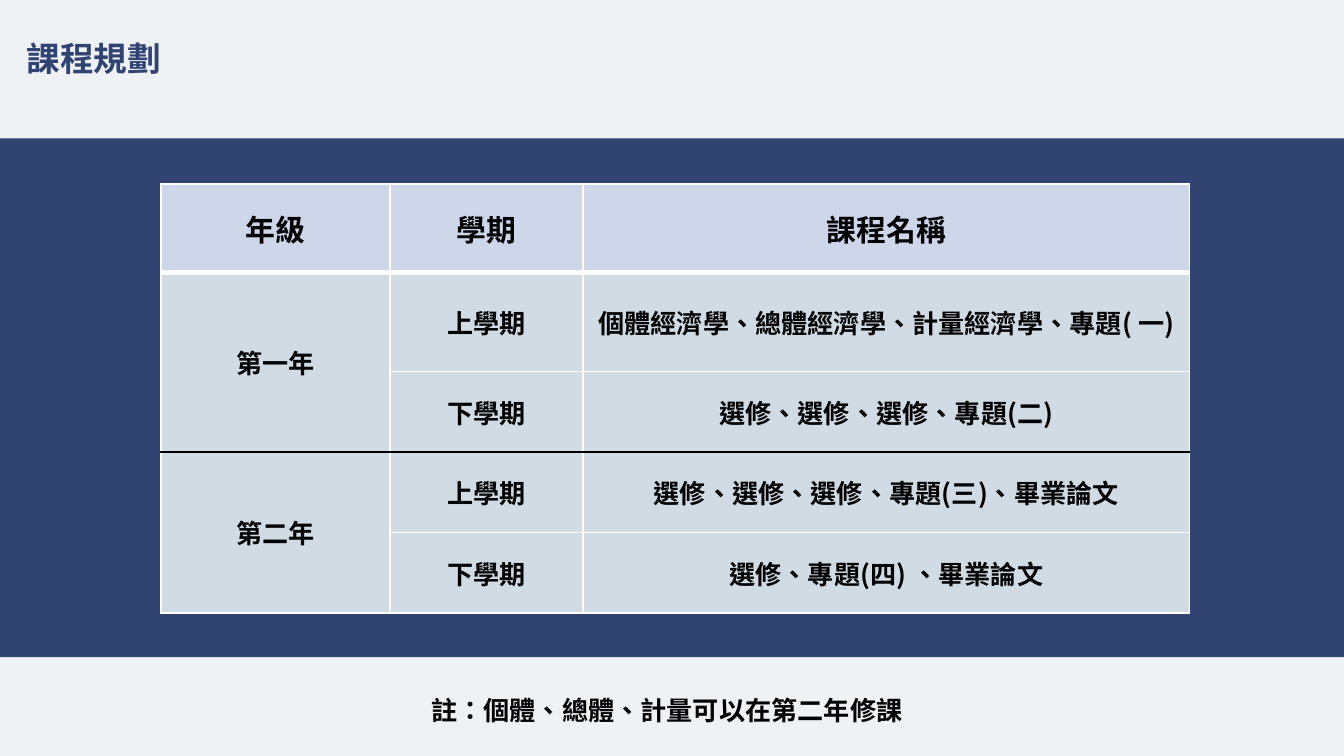
from lxml import etree
from pptx import Presentation
from pptx import util as u
from pptx.dml.color import RGBColor
from pptx.enum import shapes, text
from pptx.oxml import ns

WIDTH = 10
HEIGHT = WIDTH * 9 / 16
FONT = "Noto Sans CJK SC"
NAVY, PALE, BLACK, WHITE = "304371", "EEF2F5", "000000", "FFFFFF"
HEADER_FILL, BODY_FILL = "CED6EA", "D0DBE3"

COLUMNS = [1.7, 1.44, 4.51]
ROWS = [0.66, 0.74, 0.6, 0.6, 0.6]
HEADINGS = ["年級", "學期", "課程名稱"]
YEARS = {
    "第一年": [
        ("上學期", "個體經濟學、總體經濟學、計量經濟學、專題( 一)"),
        ("下學期", "選修、選修、選修、專題(二)"),
    ],
    "第二年": [
        ("上學期", "選修、選修、選修、專題(三)、畢業論文"),
        ("下學期", "選修、專題(四) 、畢業論文"),
    ],
}


def color(hex_value):
    return RGBColor.from_string(hex_value)


def paint(fill, hex_value):
    fill.solid()
    fill.fore_color.rgb = color(hex_value)


def write(frame, wording, size, hex_value=BLACK, align=None):
    paragraph = frame.paragraphs[0]
    paragraph.alignment = align
    run = paragraph.add_run()
    run.text = wording
    for name, value in {"size": u.Pt(size), "bold": True, "name": FONT}.items():
        setattr(run.font, name, value)
    run.font.color.rgb = color(hex_value)
    properties = run.font._element
    properties.set("lang", "zh-TW")
    etree.SubElement(properties, ns.qn("a:ea"), typeface=FONT)


def add_label(slide, box, wording, size, hex_value, wrap):
    frame = slide.shapes.add_textbox(*map(u.Inches, box)).text_frame
    frame.word_wrap = wrap
    frame.auto_size = text.MSO_AUTO_SIZE.SHAPE_TO_FIT_TEXT
    write(frame, wording, size, hex_value)


def add_band(slide, box):
    band = slide.shapes.add_shape(
        shapes.MSO_SHAPE.RECTANGLE, *map(u.Inches, box))
    band.shadow.inherit = False
    paint(band.fill, NAVY)
    band.line.fill.background()


def set_borders(cell, top, bottom):
    """Draw white sides, with top and bottom given as (colour, points)."""
    side = (WHITE, 1)
    borders = {"lnL": side, "lnR": side, "lnT": top, "lnB": bottom}
    properties = cell._tc.get_or_add_tcPr()
    for place, (tag, (hex_value, points)) in enumerate(borders.items()):
        line = etree.Element(ns.qn(f"a:{tag}"), w=str(u.Pt(points)))
        fill = etree.SubElement(line, ns.qn("a:solidFill"))
        etree.SubElement(fill, ns.qn("a:srgbClr"), val=hex_value)
        properties.insert(place, line)


def add_curriculum(slide, box):
    left, top, width, height = box
    table = slide.shapes.add_table(
        len(ROWS), len(COLUMNS), *map(u.Inches, box)).table
    for column, share in zip(table.columns, COLUMNS):
        column.width = u.Inches(width * share / sum(COLUMNS))
    for row, share in zip(table.rows, ROWS):
        row.height = u.Inches(height * share / sum(ROWS))

    lines = [HEADINGS]
    for year, terms in YEARS.items():
        for position, term in enumerate(terms):
            lines.append(["" if position else year, *term])

    thin, heavy, divider = (WHITE, 1), (WHITE, 3), (BLACK, 1)
    rules = [thin, heavy, thin, divider, thin, thin]
    for r, line in enumerate(lines):
        for c, wording in enumerate(line):
            cell = table.cell(r, c)
            paint(cell.fill, BODY_FILL if r else HEADER_FILL)
            cell.vertical_anchor = text.MSO_ANCHOR.MIDDLE
            starts_year = r > 0 and c == 0 and bool(wording)
            set_borders(cell, rules[r], rules[r + 2 if starts_year else r + 1])
            if wording:
                write(cell.text_frame, wording, 14 if r else 16,
                      align=text.PP_ALIGN.CENTER)
            if starts_year:
                cell.merge(table.cell(r + 1, c))


def build_curriculum_slide(deck):
    slide = deck.slides.add_slide(deck.slide_layouts[6])
    paint(slide.background.fill, PALE)
    add_band(slide, (0, 1.03, WIDTH, 3.86))
    add_label(slide, (3.11, 5.12, 3.79, 0.34),
              "註：個體、總體、計量可以在第二年修課", 14, BLACK, True)
    add_curriculum(slide, (1.2, 1.37, 7.65, 3.19))
    add_label(slide, (0.1, 0.23, 1.21, 0.4), "課程規劃", 18, NAVY, False)


def main():
    deck = Presentation()
    deck.slide_width, deck.slide_height = u.Inches(WIDTH), u.Inches(HEIGHT)
    build_curriculum_slide(deck)
    deck.save("out.pptx")


if __name__ == "__main__":
    main()
